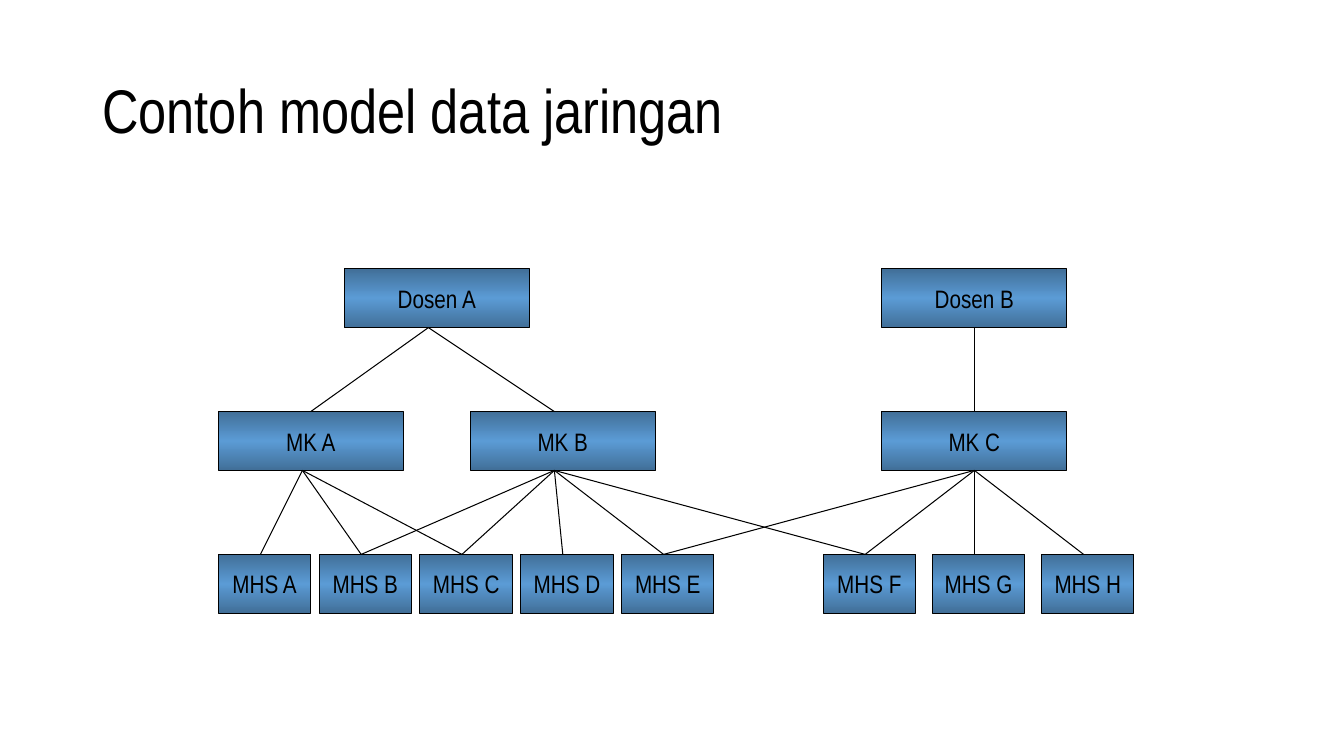
from copy import deepcopy
from dataclasses import dataclass

from pptx import Presentation
from pptx.dml.color import RGBColor
from pptx.enum.shapes import MSO_CONNECTOR as Connector, MSO_SHAPE as Shape
from pptx.enum.text import MSO_ANCHOR as Anchor, PP_ALIGN as Align
from pptx.oxml.ns import qn
from pptx.oxml.xmlchemy import OxmlElement
from pptx.util import Inches, Pt

COLUMNS, ROWS = 160, 90
TOP, BOTTOM = 0, 2


@dataclass(frozen=True)
class Theme:
    font: str = "Arial Narrow"
    ink: RGBColor = RGBColor(0, 0, 0)
    edge: RGBColor = RGBColor(0x41, 0x6F, 0x98)
    core: RGBColor = RGBColor(0x5B, 0x9B, 0xD5)
    title_size: int = 44
    label_size: int = 18
    line_width: float = 0.75


class Diagram:
    def __init__(self, deck, theme):
        self.theme = theme
        self.page = deck.slides.add_slide(deck.slide_layouts[6])
        self.column = deck.slide_width / COLUMNS
        self.row = deck.slide_height / ROWS

    def place(self, column, row):
        return round(column * self.column), round(row * self.row)

    def label(self, shape, text, size, align, wrap):
        frame = shape.text_frame
        frame.text = text
        frame.word_wrap = wrap
        frame.vertical_anchor = Anchor.MIDDLE
        para = frame.paragraphs[0]
        para.alignment = align
        font = para.runs[0].font
        font.name = self.theme.font
        font.size = Pt(size)
        font.color.rgb = self.theme.ink
        return para

    def title(self, text, column, row, width, height):
        box = self.page.shapes.add_textbox(*self.place(column, row), *self.place(width, height))
        para = self.label(box, text, self.theme.title_size, Align.LEFT, True)
        para.line_spacing = 0.9

    def shade(self, box):
        box.fill.gradient()
        box.fill.gradient_angle = 90
        stop_list = next(box.element.spPr.iter(qn("a:gsLst")))
        stop_list.append(deepcopy(stop_list[0]))
        colors = (self.theme.edge, self.theme.core, self.theme.edge)
        for stop, position, color in zip(box.fill.gradient_stops, (0, 0.5, 1), colors):
            stop.position = position
            stop.color.rgb = color

    def outline(self, shape):
        shape.line.color.rgb = self.theme.ink
        shape.line.width = Pt(self.theme.line_width)

    def box(self, text, column, row, width, height):
        box = self.page.shapes.add_shape(
            Shape.RECTANGLE, *self.place(column, row), *self.place(width, height))
        box.shadow.inherit = False
        self.shade(box)
        self.outline(box)
        self.label(box, text, self.theme.label_size, Align.CENTER, False)
        return box

    def link(self, parent, child, start_shift, end_shift):
        start = (parent.left + parent.width // 2 + round(start_shift * self.column),
                 parent.top + parent.height)
        end = (child.left + child.width // 2 + round(end_shift * self.column), child.top)
        line = self.page.shapes.add_connector(Connector.STRAIGHT, *start, *end)
        if start_shift == 0:
            line.begin_connect(parent, BOTTOM)
        if end_shift == 0:
            line.end_connect(child, TOP)
        self.outline(line)
        line.element.spPr.append(OxmlElement("a:effectLst"))


LEVELS = (
    (32, 22, {"Dosen A": 41, "Dosen B": 105}),
    (49, 22, {"MK A": 26, "MK B": 56, "MK C": 105}),
    (66, 11, {"MHS A": 26, "MHS B": 38, "MHS C": 50, "MHS D": 62,
              "MHS E": 74, "MHS F": 98, "MHS G": 111, "MHS H": 124}),
)
BOX_HEIGHT = 7
LINKS = {
    "Dosen A": ("MK A", "MK B"),
    "Dosen B": ("MK C",),
    "MK A": ("MHS A", "MHS B", "MHS C"),
    "MK B": ("MHS B", "MHS C", "MHS D", "MHS E", "MHS F"),
    "MK C": ("MHS E", "MHS F", "MHS G", "MHS H"),
}
BOTTOM_SHIFTS = {"Dosen A": -1, "MK A": -1, "MK B": -1}
TOP_SHIFTS = {"MK B": -1} | {name: -0.5 for name in LEVELS[2][2]}


def main():
    deck = Presentation()
    deck.slide_width, deck.slide_height = Inches(13.33), Inches(7.5)
    diagram = Diagram(deck, Theme())
    diagram.title("Contoh model data jaringan", 11, 4.8, 138, 17.4)
    boxes = {
        name: diagram.box(name, column, row, width, BOX_HEIGHT)
        for row, width, names in LEVELS
        for name, column in names.items()
    }
    for parent, children in LINKS.items():
        for child in children:
            diagram.link(boxes[parent], boxes[child],
                         BOTTOM_SHIFTS.get(parent, 0), TOP_SHIFTS.get(child, 0))
    deck.save("out.pptx")


if __name__ == "__main__":
    main()
